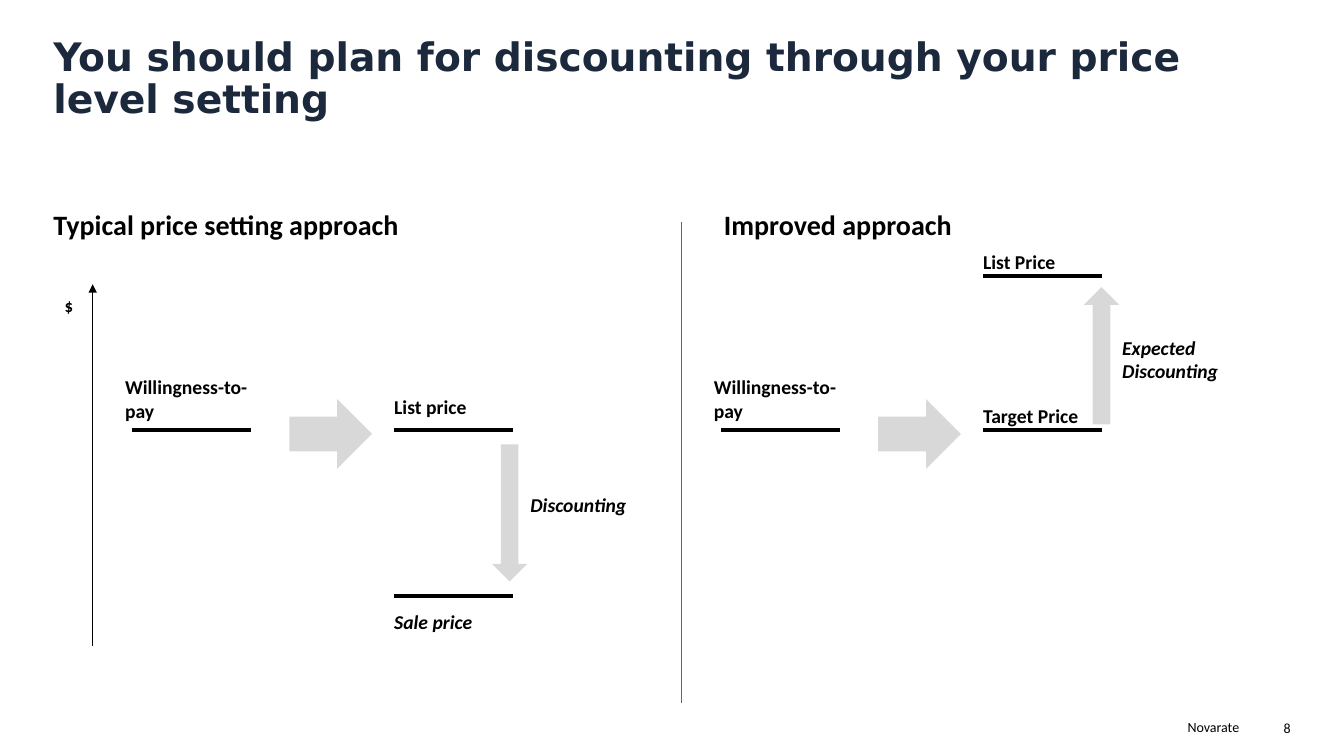
from pptx import Presentation
from pptx.dml.color import RGBColor
from pptx.enum.shapes import MSO_CONNECTOR, MSO_SHAPE
from pptx.enum.text import MSO_ANCHOR, MSO_AUTO_SIZE, PP_ALIGN
from pptx.oxml.ns import qn
from pptx.util import Pt
from lxml.etree import SubElement

PX = 9144
NAVY = RGBColor(0x1C, 0x29, 0x3C)
BLACK = RGBColor(0x00, 0x00, 0x00)
GREY = RGBColor(0x66, 0x66, 0x66)
SILVER = RGBColor(0xD8, 0xD8, 0xD8)


class Slide:
    font = "Calibri"
    mark_width = 118
    label_width = 131

    def __init__(self, prs):
        self.s = prs.slides.add_slide(prs.slide_layouts[6])

    def text(self, text, x, y, w, h, size=14, bold=True, italic=False,
             color=BLACK, font=None, align=PP_ALIGN.LEFT):
        sp = self.s.shapes.add_textbox(x * PX, y * PX, w * PX, h * PX)
        tf = sp.text_frame
        tf.word_wrap = True
        tf.auto_size = MSO_AUTO_SIZE.SHAPE_TO_FIT_TEXT
        tf.margin_left = tf.margin_right = 0
        tf.margin_top = tf.margin_bottom = 5 * PX
        p = tf.paragraphs[0]
        p.alignment = align
        r = p.add_run()
        r.text = text
        r.font.name = font or self.font
        r.font.size = Pt(size)
        r.font.bold = bold
        r.font.italic = italic
        r.font.color.rgb = color
        return tf

    def title(self, text, x, y, w, h):
        tf = self.text(text, x, y, w, h, size=28, color=NAVY, font="DejaVu Sans")
        tf.auto_size = MSO_AUTO_SIZE.NONE
        tf.vertical_anchor = MSO_ANCHOR.BOTTOM
        tf.paragraphs[0].line_spacing = 0.9

    def label(self, text, x, y, h=34, italic=False):
        self.text(text, x, y, self.label_width, h, italic=italic)

    def line(self, x1, y1, x2, y2, width, color=BLACK, arrow=False):
        c = self.s.shapes.add_connector(
            MSO_CONNECTOR.STRAIGHT, x1 * PX, y1 * PX, x2 * PX, y2 * PX)
        c.line.color.rgb = color
        c.line.width = Pt(width)
        if arrow:
            SubElement(c.line._get_or_add_ln(), qn("a:tailEnd"), type="triangle")
        SubElement(c._element.spPr, qn("a:effectLst"))

    def mark(self, x, y):
        self.line(x, y, x + self.mark_width, y, 3)

    def arrow(self, kind, x, y, w, h):
        sp = self.s.shapes.add_shape(kind, x * PX, y * PX, w * PX, h * PX)
        sp.shadow.inherit = False
        sp.fill.solid()
        sp.fill.fore_color.rgb = SILVER
        sp.line.fill.background()


def main():
    prs = Presentation()
    prs.slide_width = 1333 * PX
    prs.slide_height = 750 * PX
    s = Slide(prs)

    s.title("You should plan for discounting through your price level setting",
            53, 51, 1227, 75)
    s.text("Novarate", 921, 708, 308, 27, size=10, bold=False, align=PP_ALIGN.RIGHT)
    s.text("8", 1185, 709, 95, 27, size=10, bold=False, align=PP_ALIGN.RIGHT)
    s.line(676, 220, 676, 697, 0.5, GREY)
    s.line(92, 641, 92, 282, 1, arrow=True)
    s.text("$", 64, 288, 49, 30, size=12)

    approaches = [
        ("Typical price setting approach", 53, 131, "List price", 387),
        ("Improved approach", 718, 715, "Target Price", 396),
    ]
    for heading, heading_x, x, price, price_y in approaches:
        s.text(heading, heading_x, 201, 597, 44, size=20)
        s.mark(x, 427)
        s.label("Willingness-to-pay", x - 7, 367, 57)
        s.arrow(MSO_SHAPE.RIGHT_ARROW, x + 156, 396, 82, 69)
        s.mark(x + 260, 427)
        s.label(price, x + 260, price_y)

    s.arrow(MSO_SHAPE.DOWN_ARROW, 488, 441, 35, 136)
    s.label("Discounting", 526, 484, italic=True)
    s.mark(391, 591)
    s.label("Sale price", 391, 600, italic=True)

    s.arrow(MSO_SHAPE.UP_ARROW, 1075, 285, 35, 136)
    s.label("Expected Discounting", 1113, 328, 57, italic=True)
    s.mark(975, 274)
    s.label("List Price", 975, 243)

    prs.save("out.pptx")


if __name__ == "__main__":
    main()
